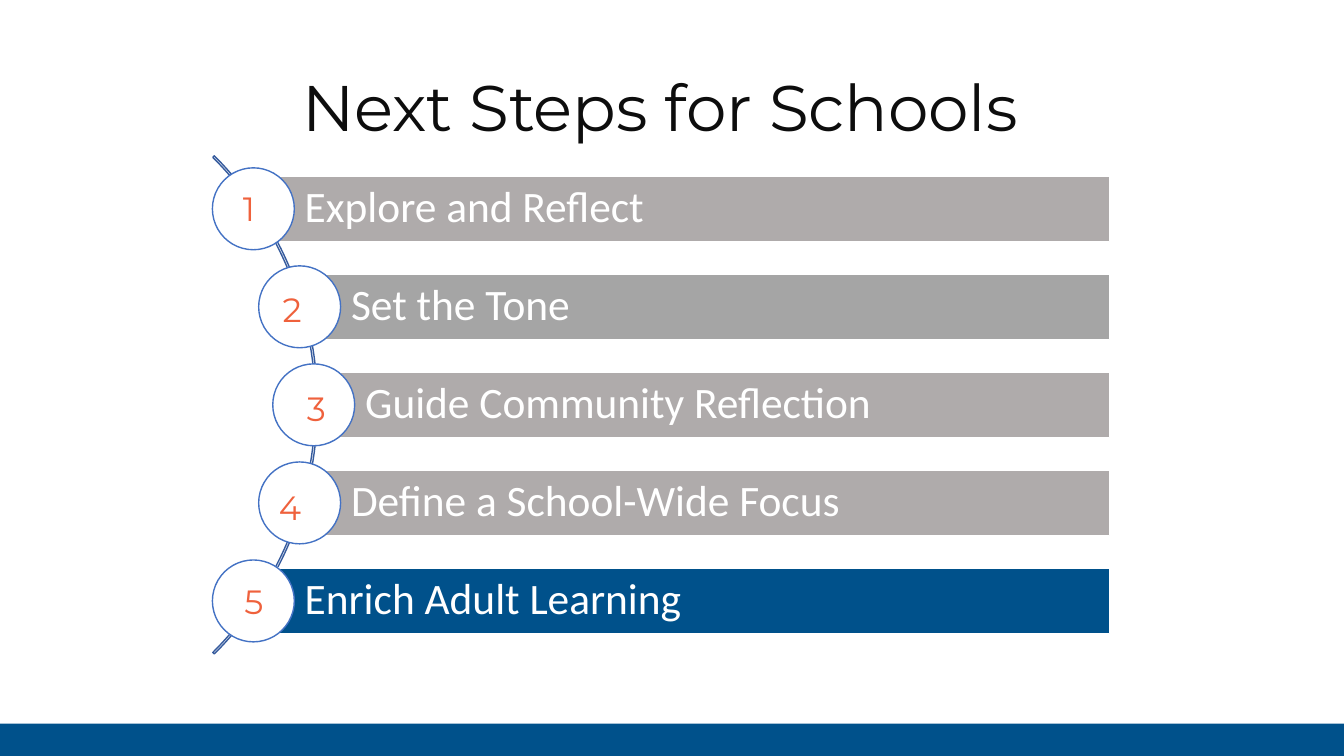
from math import sqrt
from pptx import Presentation
from pptx.dml.color import RGBColor
from pptx.enum.shapes import MSO_SHAPE
from pptx.enum.text import MSO_ANCHOR, MSO_AUTO_SIZE, PP_ALIGN
from pptx.util import Inches, Pt

COLS, ROWS = 160, 90
BLUE, GRAY, WHITE = "00518B", "AFABAB", "FFFFFF"


def paint(form, color):
    form.fore_color.rgb = RGBColor.from_string(color)


class Deck:
    head = "Montserrat"
    body = "Calibri"

    def __init__(self):
        self.show = Presentation()
        self.show.slide_width = Inches(13.333)
        self.show.slide_height = Inches(7.5)
        self.slide = self.show.slides.add_slide(self.show.slide_layouts[5])

    def area(self, left, top, width, height):
        col = self.show.slide_width / COLS
        row = self.show.slide_height / ROWS
        return [round(n) for n in (left * col, top * row, width * col, height * row)]

    def words(self, frame, text, size, font, color, align):
        frame.word_wrap = True
        frame.text = text
        par = frame.paragraphs[0]
        par.alignment = align
        par.font.size = Pt(size)
        par.font.name = font
        par.font.fill.solid()
        paint(par.font.fill, color)
        return par

    def label(self, box, text, size, color):
        frame = box.text_frame
        self.words(frame, text, size, self.head, color, PP_ALIGN.CENTER)
        frame.vertical_anchor = MSO_ANCHOR.TOP
        frame.auto_size = MSO_AUTO_SIZE.SHAPE_TO_FIT_TEXT

    def title(self, text, *cells):
        box = self.slide.shapes.title
        box.left, box.top, box.width, box.height = self.area(*cells)
        self.label(box, text, 46, "0D0D0D")

    def shape(self, kind, cells, fill=None, line=None):
        form = self.slide.shapes.add_shape(kind, *self.area(*cells))
        form.shadow.inherit = False
        if fill:
            form.fill.solid()
            paint(form.fill, fill)
        else:
            form.fill.background()
        if line:
            form.line.fill.solid()
            paint(form.line.fill, line)
            form.line.width = Pt(1)
        else:
            form.line.fill.background()
        return form

    def arc(self, x, y, radius):
        cells = (x - radius, y - radius, 2 * radius, 2 * radius)
        form = self.shape(MSO_SHAPE.BLOCK_ARC, cells, line="365B9D")
        for i, value in enumerate((189, 27, 0.003)):
            form.adjustments[i] = value

    def bar(self, text, x, y, right, fill):
        form = self.shape(MSO_SHAPE.RECTANGLE, (x, y - 3.9, right - x, 7.8), fill, WHITE)
        frame = form.text_frame
        par = self.words(frame, text, 31, self.body, WHITE, PP_ALIGN.LEFT)
        par.line_spacing = 0.9
        frame.vertical_anchor = MSO_ANCHOR.MIDDLE
        frame.margin_left = Inches(0.51)
        frame.margin_top = frame.margin_right = frame.margin_bottom = Inches(0.09)

    def disc(self, x, y, size=9.75):
        cells = (x - size / 2, y - size / 2, size, size)
        self.shape(MSO_SHAPE.OVAL, cells, WHITE, "4472C4")

    def number(self, text, x, y):
        box = self.slide.shapes.add_textbox(*self.area(x - 3.72, y - 3, 7.44, 6))
        self.label(box, text, 24, "EF613C")


def main():
    deck = Deck()
    deck.title("Next Steps for Schools", 17.4, 7.44, 122.28, 10.56)
    hub, mid, reach, pitch = -4.15, 48.2, 41.5, 11.67
    deck.arc(hub, mid, 41.94)
    steps = [
        ("Explore and Reflect", GRAY, -0.54, -0.06),
        ("Set the Tone", "A5A5A5", -0.9, 0.3),
        ("Guide Community Reflection", GRAY, 0.3, 0.42),
        ("Define a School-Wide Focus", GRAY, -1.14, 0.48),
        ("Enrich Adult Learning", BLUE, 0.06, 0.06),
    ]
    for i, (text, fill, dx, dy) in enumerate(steps):
        drop = (i - 2) * pitch
        x, y = hub + sqrt(reach ** 2 - drop ** 2), mid + drop
        deck.bar(text, x, y, 132.1, fill)
        deck.disc(x, y)
        deck.number(str(i + 1), x + dx, y + dy)
    deck.shape(MSO_SHAPE.RECTANGLE, (0, 86.16, COLS, 3.84), BLUE)
    deck.show.save("out.pptx")


if __name__ == "__main__":
    main()
